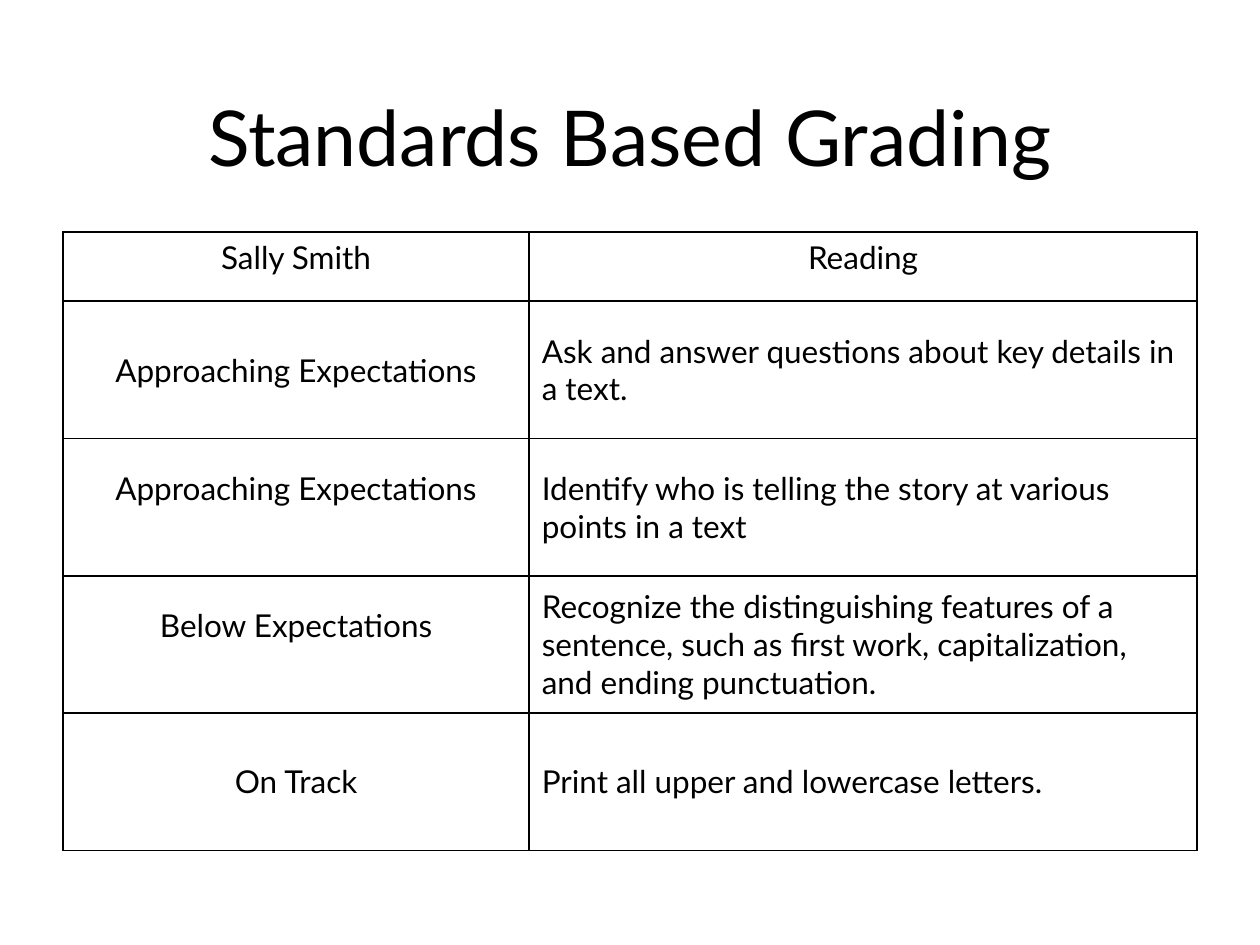
from lxml.etree import SubElement
from pptx import Presentation
from pptx.dml.color import RGBColor
from pptx.enum.text import MSO_ANCHOR, PP_ALIGN
from pptx.oxml.ns import qn
from pptx.util import Inches, Pt

BLACK = RGBColor(0, 0, 0)
WHITE = RGBColor(255, 255, 255)
FONT = "Lato"
TITLE = "Standards Based Grading"
HEADINGS = ("Sally Smith", "Reading")
GRADES = [
    ("Approaching Expectations", "Ask and answer questions about key details in a text."),
    ("Approaching Expectations", "Identify who is telling the story at various points in a text"),
    ("Below Expectations", "Recognize the distinguishing features of a sentence, "
     "such as first work, capitalization, and ending punctuation."),
    ("On Track", "Print all upper and lowercase letters."),
]
RAISED_GRADE_ROWS = (2, 3)
COLUMN_WIDTHS = (3.7, 5.3)
HEADING_HEIGHT, GRADE_HEIGHT = 0.55, 1.09


def style_text(frame, size, alignment):
    """Format every paragraph of a text frame."""
    for paragraph in frame.paragraphs:
        paragraph.alignment = alignment
        for run in paragraph.runs:
            run.font.name = FONT
            run.font.size = Pt(size)
            run.font.bold = False
            run.font.color.rgb = BLACK


def outline_cell(cell):
    """Draw a thin black border on all four sides."""
    properties = cell._tc.get_or_add_tcPr()
    for position, side in enumerate(("a:lnL", "a:lnR", "a:lnT", "a:lnB")):
        border = properties.makeelement(qn(side), {"w": str(Pt(1))})
        properties.insert(position, border)
        ink = SubElement(border, qn("a:solidFill"))
        SubElement(ink, qn("a:srgbClr"), val=str(BLACK))


def add_title(slide):
    """Place the centred slide title."""
    title = slide.shapes.title
    title.left, title.top = Inches(0.69), Inches(0.4)
    title.width, title.height = Inches(8.62), Inches(1.45)
    title.text_frame.text = TITLE
    title.text_frame.vertical_anchor = MSO_ANCHOR.MIDDLE
    title.text_frame.paragraphs[0].line_spacing = 0.9
    style_text(title.text_frame, 44, PP_ALIGN.CENTER)


def add_report(slide):
    """Build the table of grades and reading standards."""
    rows = [HEADINGS, *GRADES]
    heights = [HEADING_HEIGHT] + [GRADE_HEIGHT] * len(GRADES)
    report = slide.shapes.add_table(
        len(rows), len(HEADINGS), Inches(0.5), Inches(1.84),
        Inches(sum(COLUMN_WIDTHS)), Inches(sum(heights))).table
    report.first_row = report.horz_banding = False
    for column, width in zip(report.columns, COLUMN_WIDTHS):
        column.width = Inches(width)
    for row_index, (row, height) in enumerate(zip(rows, heights)):
        report.rows[row_index].height = Inches(height)
        for column_index, wording in enumerate(row):
            cell = report.cell(row_index, column_index)
            cell.text_frame.text = wording
            cell.fill.solid()
            cell.fill.fore_color.rgb = WHITE
            cell.vertical_anchor = MSO_ANCHOR.MIDDLE if row_index else MSO_ANCHOR.TOP
            if column_index == 0 and row_index in RAISED_GRADE_ROWS:
                cell.margin_bottom = Inches(0.35)
            centred = row_index == 0 or column_index == 0
            style_text(cell.text_frame, 18, PP_ALIGN.CENTER if centred else PP_ALIGN.LEFT)
            outline_cell(cell)


def main():
    """Create the grading slide."""
    deck = Presentation()
    deck.slide_width, deck.slide_height = Inches(10), Inches(7.5)
    slide = deck.slides.add_slide(deck.slide_layouts[5])
    add_title(slide)
    add_report(slide)
    deck.save("out.pptx")


if __name__ == "__main__":
    main()
